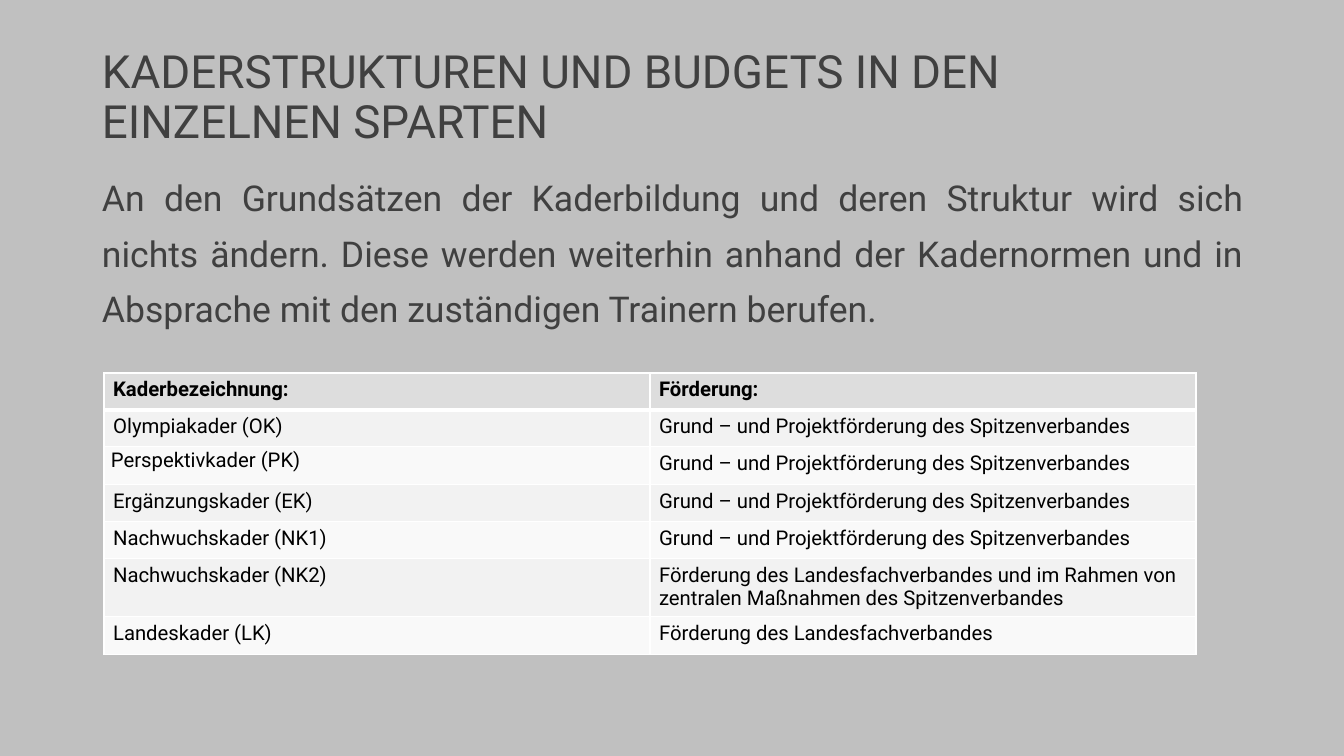
from dataclasses import dataclass

from lxml.etree import SubElement
from pptx import Presentation
from pptx.dml.color import RGBColor
from pptx.enum.text import MSO_ANCHOR, PP_ALIGN
from pptx.oxml.ns import qn
from pptx.util import Pt

EMU_PER_PX = 10000
SLIDE_SIZE = (1344, 756)

TITLE = "KADERSTRUKTUREN UND BUDGETS IN DEN EINZELNEN SPARTEN"
BODY = (
    "An den Grundsätzen der Kaderbildung und deren Struktur wird sich nichts ändern. "
    "Diese werden weiterhin anhand der Kadernormen und in Absprache mit den zuständigen "
    "Trainern berufen."
)
FEDERAL_FUNDING = "Grund – und Projektförderung des Spitzenverbandes"
SQUAD_ROWS = [
    ("Kaderbezeichnung:", "Förderung:"),
    ("Olympiakader (OK)", FEDERAL_FUNDING),
    ("Perspektivkader (PK)", FEDERAL_FUNDING),
    ("Ergänzungskader (EK)", FEDERAL_FUNDING),
    ("Nachwuchskader (NK1)", FEDERAL_FUNDING),
    (
        "Nachwuchskader (NK2)",
        "Förderung des Landesfachverbandes und im Rahmen von "
        "zentralen Maßnahmen des Spitzenverbandes",
    ),
    ("Landeskader (LK)", "Förderung des Landesfachverbandes"),
]
ROW_HEIGHTS = (37, 37, 38, 37, 37, 56, 38)
COLUMN_WIDTH = 546


@dataclass(frozen=True)
class Theme:
    font: str = "Roboto"
    background: str = "C0C0C0"
    text: str = "404040"
    table_text: str = "000000"
    border: str = "FFFFFF"
    header_fill: str = "DDDDDD"
    band_fills: tuple = ("F9F9F9", "F2F2F2")
    title_size: int = 36
    body_size: int = 28
    table_size: int = 16
    border_width: int = 1
    header_border_width: int = 3


def px(length):
    return length * EMU_PER_PX


class SlideBuilder:
    def __init__(self, slide, theme):
        self.slide = slide
        self.theme = theme
        fill = slide.background.fill
        fill.solid()
        fill.fore_color.rgb = RGBColor.from_string(theme.background)

    def style(self, paragraph, size, color, bold=False):
        font = paragraph.font
        font.name = self.theme.font
        font.size = Pt(size)
        font.bold = bold
        font.color.rgb = RGBColor.from_string(color)

    def text(self, content, box, size, line_spacing, alignment=PP_ALIGN.LEFT):
        shape = self.slide.shapes.add_textbox(*map(px, box))
        frame = shape.text_frame
        frame.word_wrap = True
        frame.vertical_anchor = MSO_ANCHOR.TOP
        paragraph = frame.paragraphs[0]
        paragraph.text = content
        paragraph.alignment = alignment
        paragraph.line_spacing = line_spacing
        self.style(paragraph, size, self.theme.text)

    def borders(self, cell, top_width, bottom_width):
        properties = cell._tc.get_or_add_tcPr()
        side_width = self.theme.border_width
        widths = {"L": side_width, "R": side_width, "T": top_width, "B": bottom_width}
        for position, (side, width) in enumerate(widths.items()):
            line = SubElement(properties, qn(f"a:ln{side}"), w=str(Pt(width)))
            fill = SubElement(line, qn("a:solidFill"))
            SubElement(fill, qn("a:srgbClr"), val=self.theme.border)
            properties.insert(position, line)

    def table(self, rows, left, top, column_width, row_heights):
        theme = self.theme
        column_count = len(rows[0])
        box = (left, top, column_width * column_count, sum(row_heights))
        shape = self.slide.shapes.add_table(len(rows), column_count, *map(px, box))
        table = shape.table
        table.horz_banding = False
        for column in table.columns:
            column.width = px(column_width)
        for row_index, (values, height) in enumerate(zip(rows, row_heights)):
            table.rows[row_index].height = px(height)
            header = row_index == 0
            color = theme.header_fill if header else theme.band_fills[row_index % 2]
            top_width = theme.header_border_width if row_index == 1 else theme.border_width
            bottom_width = theme.header_border_width if header else theme.border_width
            for column_index, value in enumerate(values):
                cell = table.cell(row_index, column_index)
                cell.text = value
                cell.fill.solid()
                cell.fill.fore_color.rgb = RGBColor.from_string(color)
                self.style(cell.text_frame.paragraphs[0], theme.table_size, theme.table_text, header)
                self.borders(cell, top_width, bottom_width)
        return table


def main():
    presentation = Presentation()
    presentation.slide_width, presentation.slide_height = map(px, SLIDE_SIZE)
    theme = Theme()
    builder = SlideBuilder(presentation.slides.add_slide(presentation.slide_layouts[6]), theme)

    builder.text(TITLE, (93, 45, 1159, 98), theme.title_size, 0.9)
    builder.text(BODY, (93, 159, 1159, 491), theme.body_size, 1.3, PP_ALIGN.JUSTIFY)

    squad_table = builder.table(SQUAD_ROWS, 104, 373, COLUMN_WIDTH, ROW_HEIGHTS)
    perspective_cell = squad_table.cell(2, 0)
    perspective_cell.margin_left = perspective_cell.margin_right = px(7)
    perspective_cell.margin_top = perspective_cell.margin_bottom = 0
    perspective_cell.text_frame.paragraphs[0].line_spacing = 1.07

    presentation.save("out.pptx")


if __name__ == "__main__":
    main()
